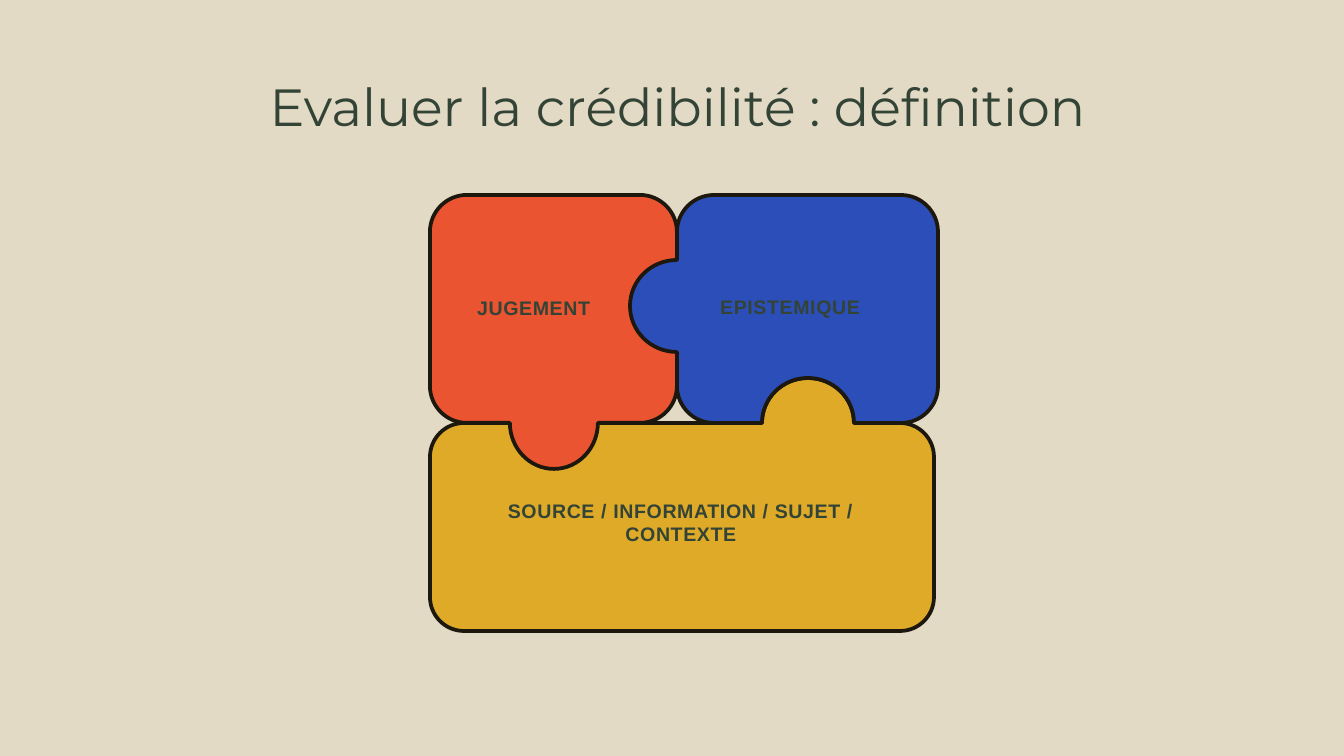
import math

import lxml.etree
import pptx
import pptx.dml.color
import pptx.enum.shapes
import pptx.enum.text
import pptx.oxml.ns
import pptx.util

SCALE = 914400 / 134.4  # EMU per px
KAPPA = 0.5523  # handle length of a quarter arc, in radii
BACKGROUND = pptx.dml.color.RGBColor(0xE3, 0xDA, 0xC5)
TEXT = pptx.dml.color.RGBColor(0x33, 0x44, 0x36)
OUTLINE = pptx.dml.color.RGBColor(0x1D, 0x18, 0x0E)
YELLOW = pptx.dml.color.RGBColor(0xDF, 0xAA, 0x28)
RED = pptx.dml.color.RGBColor(0xEA, 0x54, 0x30)
BLUE = pptx.dml.color.RGBColor(0x2C, 0x4E, 0xB8)
CENTER = pptx.enum.text.PP_ALIGN.CENTER
LEFT = pptx.enum.text.PP_ALIGN.LEFT
TITLE_FONT = {"name": "Montserrat", "size": pptx.util.Pt(28), "bold": False}
LABEL_FONT = {"name": "Arial", "size": pptx.util.Pt(10.5), "bold": True}


def px(*lengths):
    return [round(length * SCALE) for length in lengths]


def write(box, words, align, font, frame_format):
    for name, value in frame_format.items():
        setattr(box.text_frame, name, value)
    para = box.text_frame.paragraphs[0]
    para.alignment = align
    span = para.add_run()
    span.text = words
    for name, value in font.items():
        setattr(span.font, name, value)
    span.font.color.rgb = TEXT
    return span


deck = pptx.Presentation()
deck.slide_width, deck.slide_height = px(1344, 756)
page = deck.slides.add_slide(deck.slide_layouts[5])
page.background.fill.solid()
page.background.fill.fore_color.rgb = BACKGROUND

# Title
title = page.shapes.title
title.left, title.top, title.width, title.height = px(111, 61, 1133, 85)
title_frame = {
    "margin_left": px(13)[0], "margin_right": px(13)[0],
    "margin_top": px(13)[0], "margin_bottom": px(13)[0],
    "vertical_anchor": pptx.enum.text.MSO_ANCHOR.TOP,
    "auto_size": pptx.enum.text.MSO_AUTO_SIZE.NONE,
}
write(title, "Evaluer la crédibilité : définition", CENTER, TITLE_FONT, title_frame)

# Puzzle pieces: body (left, top, right, bottom, corner radius), then the
# tab or notch on a side as (centre x, centre y, radius x, radius y, start, end)
pieces = [
    (YELLOW, (430, 423, 934, 631, 34),
     {"top": [(554, 423, 43, 45, 180, 0), (808, 423, 46, 45, 180, 360)]},
     "SOURCE / INFORMATION / SUJET / CONTEXTE", CENTER, (446, 492, 470, 60)),
    (RED, (430, 195, 677, 423, 37),
     {"right": [(677, 306, 45, 45, 270, 90)],
      "bottom": [(554, 423, 44, 46, 0, 180)]},
     "JUGEMENT", LEFT, (464, 289, 165, 38)),
    (BLUE, (677, 195, 938, 423, 37),
     {"bottom": [(808, 423, 46, 45, 360, 180)],
      "left": [(677, 306, 47, 46, 90, 270)]},
     "EPISTEMIQUE", LEFT, (707, 288, 202, 38)),
]
label_frame = {
    "word_wrap": True,
    "vertical_anchor": pptx.enum.text.MSO_ANCHOR.TOP,
    "auto_size": pptx.enum.text.MSO_AUTO_SIZE.SHAPE_TO_FIT_TEXT,
}
for color, (left, top, right, bottom, radius), joints, words, align, area in pieces:
    # Corners and joints clockwise, with straight edges between
    corners = [
        ("top", left + radius, top + radius, 180),
        ("right", right - radius, top + radius, 270),
        ("bottom", right - radius, bottom - radius, 0),
        ("left", left + radius, bottom - radius, 90),
    ]
    arcs = []
    for side, x, y, start in corners:
        arcs.append((x, y, radius, radius, start, start + 90))
        arcs.extend(joints.get(side, []))

    # Each arc: its start point, then three curve points per quarter turn
    points, curved = [], []
    for x, y, radius_x, radius_y, start, end in arcs:
        turn = 90 if end > start else -90
        for angle in range(start, end, turn):
            c1, s1 = math.cos(math.radians(angle)), math.sin(math.radians(angle))
            c2, s2 = (math.cos(math.radians(angle + turn)),
                      math.sin(math.radians(angle + turn)))
            quarter = [(c1, s1), (c1 + KAPPA * c2, s1 + KAPPA * s2),
                       (c2 + KAPPA * c1, s2 + KAPPA * s1), (c2, s2)]
            first = 0 if angle == start else 1
            points.extend(px(x + radius_x * u, y + radius_y * v)
                          for u, v in quarter[first:])
            curved.extend([False, True, True, True][first:])

    group = page.shapes.add_group_shape()
    builder = group.shapes.build_freeform(*points[0])
    builder.add_line_segments(points[1:], close=True)
    piece = builder.convert_to_shape()

    # Join every three curve points into one Bezier segment
    segments = list(piece._element.iter(pptx.oxml.ns.qn("a:lnTo")))
    handles = [segment for segment, bent in zip(segments, curved[1:]) if bent]
    for index in range(0, len(handles), 3):
        curve = lxml.etree.Element(pptx.oxml.ns.qn("a:cubicBezTo"))
        handles[index].addprevious(curve)
        for segment in handles[index:index + 3]:
            curve.append(segment[0])
            segment.getparent().remove(segment)

    piece.shadow.inherit = False
    piece.fill.solid()
    piece.fill.fore_color.rgb = color
    piece.line.color.rgb = OUTLINE
    piece.line.width = pptx.util.Pt(2)

    # Label
    label = group.shapes.add_shape(
        pptx.enum.shapes.MSO_SHAPE.RECTANGLE, *px(*area))
    label.shadow.inherit = False
    label.fill.solid()
    label.fill.fore_color.rgb = color
    label.line.fill.background()
    span = write(label, words, align, LABEL_FONT, label_frame)
    span._r.get_or_add_rPr().set("spc", "38")

deck.save("out.pptx")
